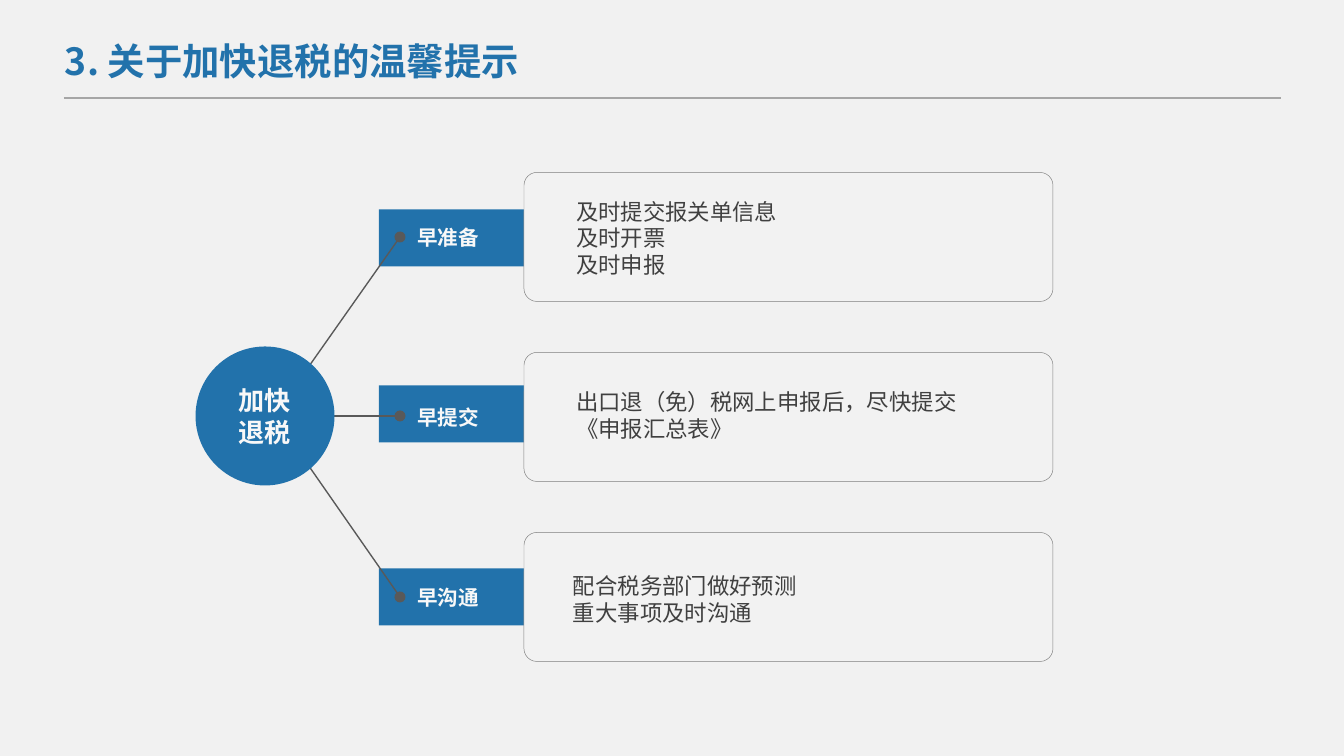
from lxml.etree import SubElement
from pptx import Presentation
from pptx.dml.color import RGBColor
from pptx.enum.shapes import MSO_CONNECTOR, MSO_SHAPE
from pptx.enum.text import MSO_ANCHOR, MSO_AUTO_SIZE, PP_ALIGN
from pptx.oxml.ns import qn
from pptx.util import Emu, Pt

# Content
TITLE = "3. 关于加快退税的温馨提示"
HUB = ["加快", "退税"]
# label, tag centre y, body left, body centre y, body width, body paragraphs
ROWS = [
    ("早准备", 238, 567, 238, 370, ["及时提交报关单信息", "及时开票", "及时申报"]),
    ("早提交", 414, 567, 415, 422, ["出口退（免）税网上申报后，尽快提交《申报汇总表》"]),
    ("早沟通", 597, 564, 599, 391, ["配合税务部门做好预测", "重大事项及时沟通"]),
]

BLUE, WHITE, DARK, GREY = "2272AB", "F8F8F8", "404040", "595959"
BODY_FONT, TITLE_FONT = "Calibri", "Noto Sans CJK SC"
SCALE = 914400 / 134.4

# Layout in px
HUB_X, HUB_Y, HUB_D = 265, 416, 139
ROW_Y, ROW_STEP = 237, 180
TAG_X, TAG_W, TAG_H = 379, 185, 57
CARD_X, CARD_W, CARD_H = 524, 529, 129
LABEL_X, LABEL_W, LABEL_H = 400, 155, 36
BODY_H = 70
DOT_X, LINE_X = 400, 274


def px(n):
    return Emu(round(n * SCALE))


def rgb(value):
    return RGBColor.from_string(value)


def box(x, y, w, h):
    return px(x), px(y), px(w), px(h)


def write(sp, lines, size, color, font=BODY_FONT, bold=False, align=PP_ALIGN.LEFT,
          inset=(9, 4, 9, 4), wrap=True, anchor=MSO_ANCHOR.MIDDLE):
    tf = sp.text_frame
    tf.word_wrap = wrap
    tf.vertical_anchor = anchor
    tf.margin_left, tf.margin_top, tf.margin_right, tf.margin_bottom = map(px, inset)
    for i, line in enumerate(lines):
        p = tf.paragraphs[0] if i == 0 else tf.add_paragraph()
        p.alignment = align
        r = p.add_run()
        r.text = line
        r.font.size, r.font.bold, r.font.name = Pt(size), bold, font
        r.font.color.rgb = rgb(color)
        SubElement(r.font._element, qn("a:ea")).set("typeface", font)
    return tf


def add_shape(kind, x, y, w, h, fill, line=None):
    sp = s.shapes.add_shape(kind, *box(x, y, w, h))
    sp.shadow.inherit = False
    sp.fill.solid()
    sp.fill.fore_color.rgb = rgb(fill)
    if line:
        sp.line.color.rgb = rgb(line)
        sp.line.width = Pt(0.25)
    else:
        sp.line.fill.background()
    return sp


def add_line(x1, y1, x2, y2, color, width, dots=False):
    cn = s.shapes.add_connector(MSO_CONNECTOR.STRAIGHT, px(x1), px(y1), px(x2), px(y2))
    cn.line.color.rgb = rgb(color)
    cn.line.width = Pt(width)
    if dots:
        ln = cn.line._get_or_add_ln()
        for end in ("a:headEnd", "a:tailEnd"):
            SubElement(ln, qn(end)).set("type", "oval")
    SubElement(cn._element.spPr, qn("a:effectLst"))


prs = Presentation()
prs.slide_width, prs.slide_height = px(1344), px(756)
s = prs.slides.add_slide(prs.slide_layouts[6])
s.background.fill.solid()
s.background.fill.fore_color.rgb = rgb("F1F1F1")

# Title and rule
add_line(64, 98, 1281, 98, "A6A6A6", 1)
title = s.shapes.add_textbox(*box(52, 31, 503, 59))
tf = write(title, [TITLE], 20, BLUE, TITLE_FONT, True, inset=(13, 7, 13, 7),
           wrap=False, anchor=MSO_ANCHOR.TOP)
tf.auto_size = MSO_AUTO_SIZE.SHAPE_TO_FIT_TEXT

# Rows: tag, card, label, connector, body
for i, (label, tag_y, body_x, body_y, body_w, body) in enumerate(ROWS):
    y = ROW_Y + i * ROW_STEP
    add_shape(MSO_SHAPE.PENTAGON, TAG_X, tag_y - TAG_H / 2, TAG_W, TAG_H, BLUE)
    card = add_shape(MSO_SHAPE.ROUNDED_RECTANGLE, CARD_X, y - CARD_H / 2,
                     CARD_W, CARD_H, "F2F2F2", "7F7F7F")
    card.adjustments[0] = 0.1
    sp = s.shapes.add_textbox(*box(LABEL_X, y - LABEL_H / 2, LABEL_W, LABEL_H))
    write(sp, [label], 11, WHITE, bold=True, inset=(17, 4, 9, 4))
    add_line(LINE_X, HUB_Y, DOT_X, HUB_Y if i == 1 else y, GREY, 0.75, dots=True)
    sp = s.shapes.add_textbox(*box(body_x, body_y - BODY_H / 2, body_w, BODY_H))
    write(sp, body, 12, DARK)

# Hub over the line starts
hub = add_shape(MSO_SHAPE.OVAL, HUB_X - HUB_D / 2, HUB_Y - HUB_D / 2, HUB_D, HUB_D, BLUE)
write(hub, HUB, 14, WHITE, bold=True, align=PP_ALIGN.CENTER)

prs.save("out.pptx")
